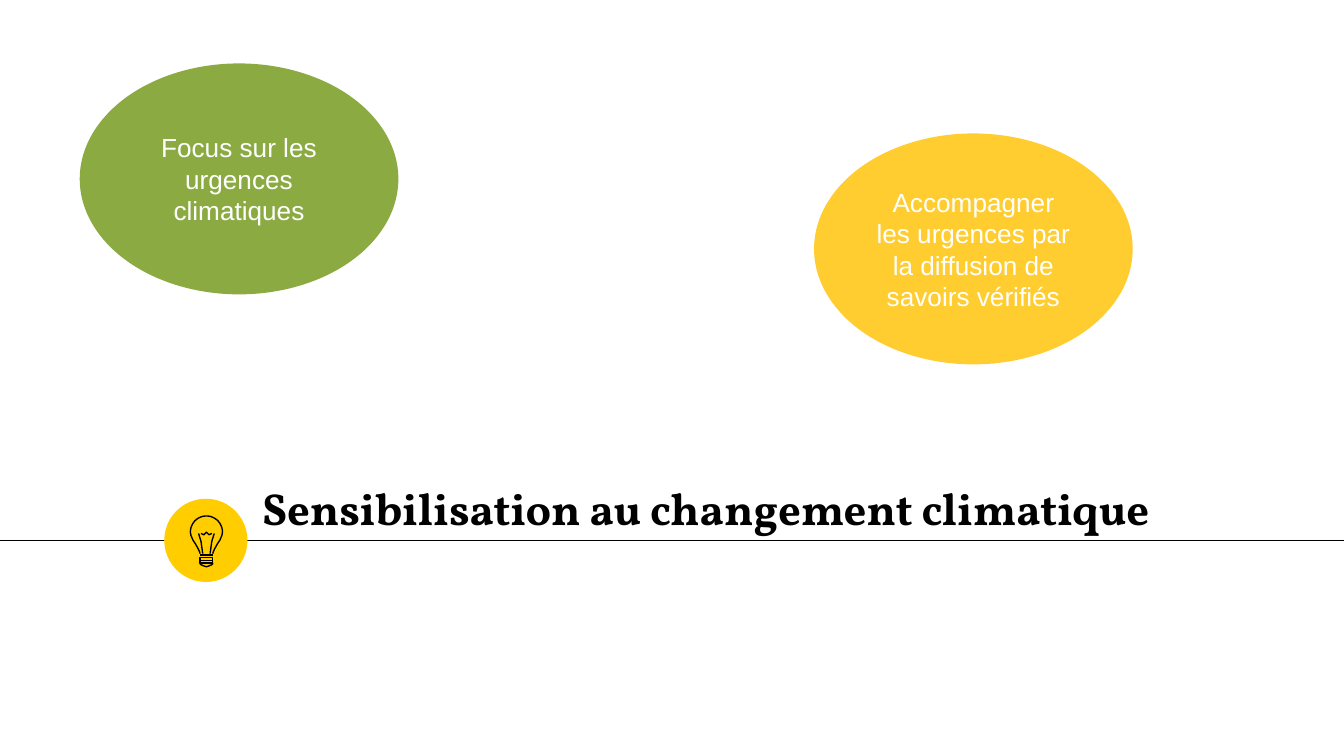
from math import cos, pi, sin

from lxml.etree import SubElement
from pptx import Presentation
from pptx.dml.color import RGBColor
from pptx.enum.shapes import MSO_CONNECTOR as Connector, MSO_SHAPE as Shape
from pptx.enum.text import MSO_ANCHOR as Anchor, MSO_AUTO_SIZE as AutoSize, PP_ALIGN as Align
from pptx.oxml.ns import qn
from pptx.util import Pt

BLACK, WHITE = "000000", "FFFFFF"
GREEN, YELLOW, GOLD = "8BAB42", "FFCD2F", "FFCD00"


def color(value):
    """Turn a hex string into a colour."""
    return RGBColor.from_string(value)


def apply_format(target, values):
    """Set each named attribute on the target."""
    for name, value in values.items():
        setattr(target, name, value)


def write(frame, text, align, hue, frame_format, font_format):
    """Write one formatted paragraph into a text frame."""
    apply_format(frame, {"word_wrap": True, "auto_size": AutoSize.NONE, **frame_format})
    para = frame.paragraphs[0]
    para.alignment = align
    span = para.add_run()
    span.text = text
    apply_format(span.font, font_format)
    span.font.color.rgb = color(hue)


def add_title(page, box, text):
    """Place the title at the bottom of its box."""
    title = page.shapes.title
    apply_format(title, dict(zip(("left", "top", "width", "height"), map(Pt, box))))
    margins = {f"margin_{side}": Pt(7.2) for side in ("left", "top", "right", "bottom")}
    write(title.text_frame, text, Align.LEFT, BLACK,
          {"vertical_anchor": Anchor.BOTTOM, **margins},
          {"name": "Vollkorn", "size": Pt(24), "bold": True})


def add_line(shapes, start, end):
    """Draw a thin black line without a shadow."""
    line = shapes.add_connector(Connector.STRAIGHT, *start, *end)
    line.line.color.rgb = color(BLACK)
    line.line.width = Pt(0.75)
    SubElement(line._element.spPr, qn("a:effectLst"))


def add_ellipse(page, box, fill):
    """Draw a plain filled ellipse."""
    ellipse = page.shapes.add_shape(Shape.OVAL, *map(Pt, box))
    ellipse.shadow.inherit = False
    ellipse.fill.solid()
    ellipse.fill.fore_color.rgb = color(fill)
    ellipse.line.fill.background()
    return ellipse


def add_bubble(page, box, fill, text):
    """Draw an ellipse with centred white text."""
    bubble = add_ellipse(page, box, fill)
    bubble.line.color.rgb = color(fill)
    bubble.line.width = Pt(2)
    write(bubble.text_frame, text, Align.CENTER, WHITE,
          {"vertical_anchor": Anchor.MIDDLE}, {"name": "Arial", "size": Pt(14)})


def mirror(points):
    """Reflect points across the vertical axis in reverse order."""
    return [(-x, y) for x, y in reversed(points)]


def add_bulb(page, box):
    """Draw a symmetric line-art bulb that fits the box width."""
    left, top, width, _ = box
    group = page.shapes.add_group_shape()
    center, unit = left + width / 2, width / 172
    steps = 12
    arc = [(86 * sin(pi / 2 * i / steps), 86 - 86 * cos(pi / 2 * i / steps))
           for i in range(steps + 1)]
    glass = arc + [(83, 104), (72, 130), (58, 151), (43, 178), (36, 194), (34, 202)]
    filament = [(42, 94), (29, 137), (20, 202)]
    crown = [(0, 87), (14, 101), (29, 94)]
    cap = [(0, 272), (8, 270), (28, 262), (34, 256), (34, 252)]
    bands = [[(-34, y), (34, y), (34, y + 14), (-34, y + 14)] for y in (224, 238)]
    outlines = [(band, True) for band in bands] + [(mirror(cap) + cap[1:], True)]
    outlines += [(mirror(half) + half[1:], False) for half in (glass, crown)]
    outlines += [(filament, False), (mirror(filament), False)]
    for points, closed in outlines:
        builder = group.shapes.build_freeform(*points[0], scale=Pt(1) * unit)
        builder.add_line_segments(points[1:], close=closed)
        stroke = builder.convert_to_shape(Pt(center), Pt(top))
        stroke.shadow.inherit = False
        stroke.fill.background()
        stroke.line.color.rgb = color(BLACK)
        stroke.line.width = Pt(0.75)
    ends = [(Pt(center + x * unit), Pt(top + 209 * unit)) for x in (-34, 34)]
    add_line(group.shapes, *ends)


def add_divider(page, box):
    """Draw the line across the box with its gold bulb badge."""
    left, top, width, height = box
    middle = top + height / 2
    add_line(page.shapes, (Pt(left), Pt(middle)), (Pt(left + width), Pt(middle)))
    badge_left = left + 88
    add_ellipse(page, (badge_left, top, height, height), GOLD)
    add_bulb(page, (badge_left + 14, top + 9.2, 17.2, 27.2))


def main():
    """Build and save the slide."""
    deck = Presentation()
    deck.slide_width, deck.slide_height = Pt(720), Pt(405)
    page = deck.slides.add_slide(deck.slide_layouts[5])
    add_divider(page, (0, 267.2, 720, 44.6))
    add_title(page, (133.2, 227.5, 559.4, 66.2), "Sensibilisation au changement climatique")
    add_bubble(page, (43.7, 35, 168.7, 121.7), GREEN, "Focus sur les urgences climatiques")
    add_bubble(page, (437.1, 72.5, 168.7, 121.7), YELLOW,
               "Accompagner les urgences par la diffusion de savoirs vérifiés")
    deck.save("out.pptx")


if __name__ == "__main__":
    main()
